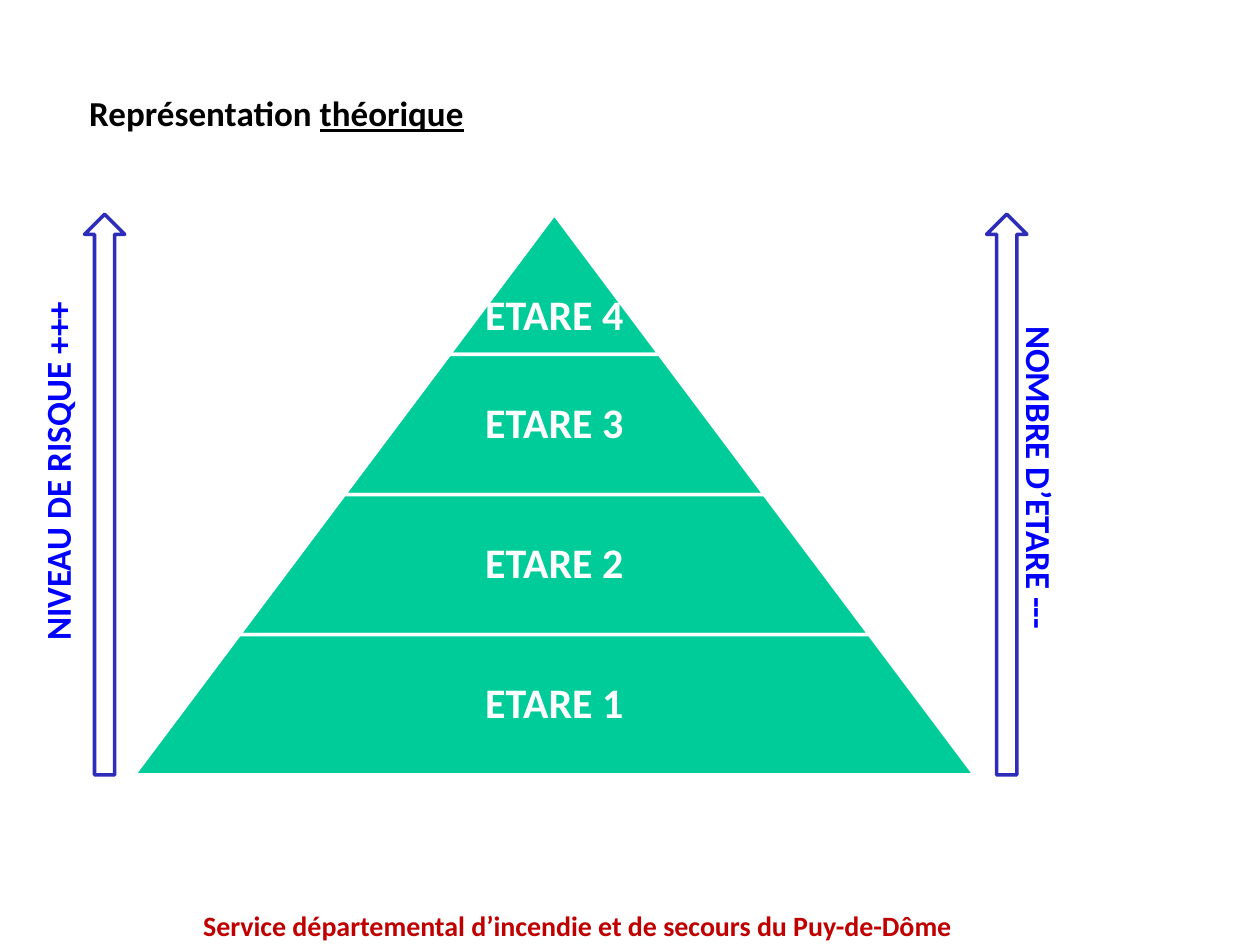
from dataclasses import dataclass

from pptx import Presentation
from pptx.dml.color import RGBColor
from pptx.enum import shapes, text
from pptx.util import Inches, Pt


@dataclass(frozen=True)
class Theme:
    font: str = "Calibri"
    black: str = "000000"
    white: str = "FFFFFF"
    green: str = "00CC99"
    indigo: str = "2D2DB9"
    blue: str = "0000FF"
    red: str = "C00000"
    footer_size: int = 16
    heading_size: int = 20
    tier_size: int = 24
    line_width: int = 2


def write(frame, *runs, size, color, font, align=text.PP_ALIGN.LEFT,
          spacing=None, underlined=()):
    """Fill the first paragraph with bold runs, underlining those listed."""
    paragraph = frame.paragraphs[0]
    paragraph.alignment = align
    if spacing:
        paragraph.line_spacing = spacing
    for words in runs:
        run = paragraph.add_run()
        run.text = words
        run.font.name = font
        run.font.size = Pt(size)
        run.font.bold = True
        run.font.color.rgb = RGBColor.from_string(color)
        if words in underlined:
            run.font.underline = True


class SlideBuilder:
    def __init__(self, slide, theme):
        self.slide = slide
        self.theme = theme

    def outline(self, kind, box, fill, line, adjustment=None):
        shape = self.slide.shapes.add_shape(kind, *map(Inches, box))
        shape.shadow.inherit = False
        shape.fill.solid()
        shape.fill.fore_color.rgb = RGBColor.from_string(fill)
        shape.line.color.rgb = RGBColor.from_string(line)
        shape.line.width = Pt(self.theme.line_width)
        if adjustment is not None:
            shape.adjustments[0] = adjustment

    def label(self, box, *runs, rotation=0, wrap=True, inset=None, top_inset=None,
              anchor=text.MSO_ANCHOR.TOP, **style):
        label = self.slide.shapes.add_textbox(*map(Inches, box))
        label.rotation = rotation
        frame = label.text_frame
        frame.word_wrap = wrap
        frame.vertical_anchor = anchor
        if inset is not None:
            frame.margin_left = frame.margin_right = Inches(inset)
            frame.margin_top = frame.margin_bottom = Inches(inset)
        if top_inset is not None:
            frame.margin_top = Inches(top_inset)
        write(frame, *runs, font=self.theme.font, **style)

    def arrow(self, left, top, height):
        self.outline(shapes.MSO_SHAPE.UP_ARROW, (left, top, 0.32, height),
                     self.theme.white, self.theme.indigo)

    def pyramid(self, tiers, center, top, width, height):
        """Stack equal-height tiers, listed from the apex down."""
        tier_height = height / len(tiers)
        for index, name in enumerate(tiers):
            is_apex = index == 0
            tier_width = width * (index + 1) / len(tiers)
            tier_top = top + index * tier_height
            self.outline(shapes.MSO_SHAPE.TRAPEZOID,
                         (center - tier_width / 2, tier_top, tier_width, tier_height),
                         self.theme.green, self.theme.white, adjustment=0.75)
            name_width = tier_width if is_apex else tier_width * 0.65
            self.label((center - name_width / 2, tier_top, name_width, tier_height),
                       name, inset=0.03, top_inset=0.55 if is_apex else None,
                       anchor=text.MSO_ANCHOR.MIDDLE, align=text.PP_ALIGN.CENTER,
                       spacing=0.9, size=self.theme.tier_size, color=self.theme.white)


def main():
    theme = Theme()
    deck = Presentation()
    deck.slide_width, deck.slide_height = Inches(10), Inches(7.5)
    builder = SlideBuilder(deck.slides.add_slide(deck.slide_layouts[6]), theme)

    builder.label((0, 7.16, 9.17, 0.37),
                  "Service départemental d’incendie et de secours du Puy-de-Dôme",
                  align=text.PP_ALIGN.CENTER, size=theme.footer_size, color=theme.red)
    builder.label((0.61, 0.68, 3.2, 0.44), "Représentation ", "théorique",
                  wrap=False, align=text.PP_ALIGN.JUSTIFY, underlined=("théorique",),
                  size=theme.heading_size, color=theme.black)

    top, height = 1.7, 4.45
    builder.pyramid(("ETARE 4", "ETARE 3", "ETARE 2", "ETARE 1"),
                    center=4.4, top=top, width=6.67, height=height)

    axes = (
        (0.67, "NIVEAU DE RISQUE +++", (-1.05, 3.46, 3.01, 0.44), 270),
        (7.83, "NOMBRE D’ETARE ---", (6.87, 3.65, 2.76, 0.44), 90),
    )
    for arrow_left, caption, caption_box, rotation in axes:
        builder.arrow(arrow_left, top, height)
        builder.label(caption_box, caption, rotation=rotation,
                      size=theme.heading_size, color=theme.blue)

    deck.save("out.pptx")


if __name__ == "__main__":
    main()
